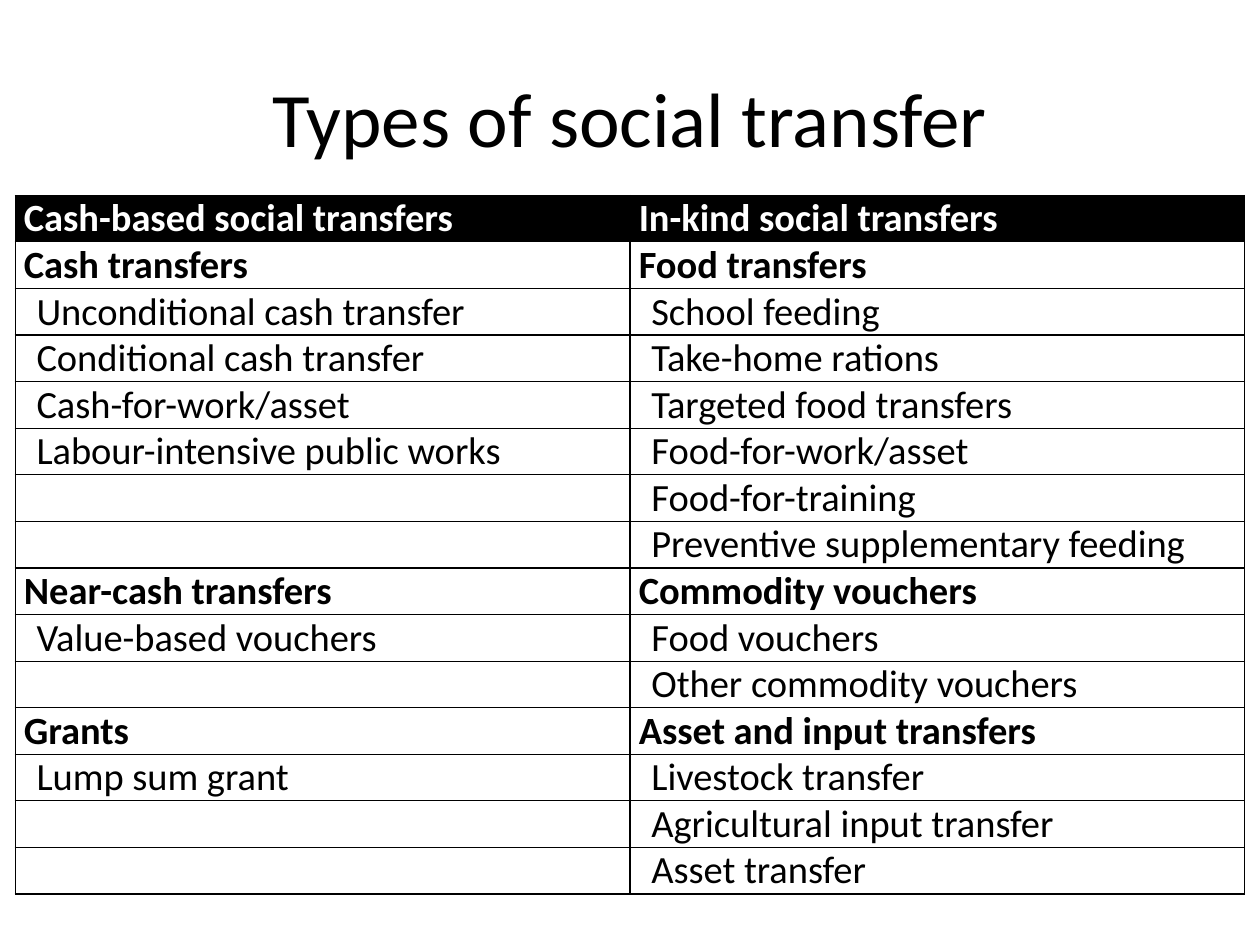
from dataclasses import dataclass

from lxml import etree
from pptx import Presentation
from pptx import util as u
from pptx.dml.color import RGBColor
from pptx.enum import text
from pptx.oxml.ns import qn

COLOURS = {"ink": "000000", "paper": "FFFFFF"}
FONT = "Calibri"
SLIDE_W, SLIDE_H = u.Inches(10), u.Inches(7.5)
ROW_H = u.Inches(0.37)
BORDER_W = u.Pt(0.75)
ITEM_INDENT = u.Inches(0.1)


@dataclass
class Level:
    """Look of one level of table entry."""
    ink: str
    fill: str
    bold: bool
    indent: int = 0


@dataclass
class Group:
    """A pair of headings with the transfers listed under each."""
    headings: tuple
    cash_items: list
    in_kind_items: list


HEADER = Level("paper", "ink", True)
HEADING = Level("ink", "paper", True)
ITEM = Level("ink", "paper", False, ITEM_INDENT)

COLUMN_TITLES = ("Cash-based social transfers", "In-kind social transfers")
GROUPS = [
    Group(("Cash transfers", "Food transfers"),
          ["Unconditional cash transfer", "Conditional cash transfer",
           "Cash-for-work/asset", "Labour-intensive public works"],
          ["School feeding", "Take-home rations", "Targeted food transfers",
           "Food-for-work/asset", "Food-for-training",
           "Preventive supplementary feeding"]),
    Group(("Near-cash transfers", "Commodity vouchers"),
          ["Value-based vouchers"],
          ["Food vouchers", "Other commodity vouchers"]),
    Group(("Grants", "Asset and input transfers"),
          ["Lump sum grant"],
          ["Livestock transfer", "Agricultural input transfer", "Asset transfer"]),
]


def colour(name: str) -> RGBColor:
    return RGBColor.from_string(COLOURS[name])


def apply(target, values: dict) -> None:
    for name, value in values.items():
        setattr(target, name, value)


def write(paragraph, wording: str, size: int, ink: str, bold: bool = False) -> None:
    run = paragraph.add_run()
    run.text = wording
    apply(run.font, {"name": FONT, "size": u.Pt(size), "bold": bold})
    run.font.color.rgb = colour(ink)


def add_borders(cell) -> None:
    properties = cell._tc.get_or_add_tcPr()
    for place, side in enumerate(("lnL", "lnR", "lnT", "lnB")):
        line = etree.Element(qn(f"a:{side}"), w=str(BORDER_W))
        fill = etree.SubElement(line, qn("a:solidFill"))
        etree.SubElement(fill, qn("a:srgbClr"), val=COLOURS["ink"])
        properties.insert(place, line)


def fill_cell(cell, wording: str, level: Level) -> None:
    apply(cell, {"margin_left": u.Inches(0.07), "margin_right": u.Inches(0.07),
                 "margin_top": 0, "margin_bottom": 0})
    cell.fill.solid()
    cell.fill.fore_color.rgb = colour(level.fill)
    add_borders(cell)
    if wording:
        paragraph = cell.text_frame.paragraphs[0]
        write(paragraph, wording, 22, level.ink, level.bold)
        if level.indent:
            paragraph._p.get_or_add_pPr().set("marL", str(level.indent))


def table_rows() -> list:
    rows = [(COLUMN_TITLES, HEADER)]
    for group in GROUPS:
        rows.append((group.headings, HEADING))
        blanks = len(group.in_kind_items) - len(group.cash_items)
        cash_items = group.cash_items + [""] * blanks
        rows += [(pair, ITEM) for pair in zip(cash_items, group.in_kind_items)]
    return rows


def add_title(slide) -> None:
    box = slide.shapes.add_textbox(
        int(SLIDE_W * 0.05), int(SLIDE_H * 0.04), int(SLIDE_W * 0.9), u.Inches(1.25))
    frame = box.text_frame
    apply(frame, {"word_wrap": True, "vertical_anchor": text.MSO_ANCHOR.MIDDLE})
    title = frame.paragraphs[0]
    title.alignment = text.PP_ALIGN.CENTER
    write(title, "Types of social transfer", 44, "ink")


def add_transfer_table(slide) -> None:
    rows = table_rows()
    margin = u.Inches(0.12)
    table = slide.shapes.add_table(
        len(rows), len(COLUMN_TITLES), margin, u.Inches(1.55),
        SLIDE_W - 2 * margin, ROW_H * len(rows)).table
    for row, (wordings, level) in enumerate(rows):
        for column, wording in enumerate(wordings):
            fill_cell(table.cell(row, column), wording, level)


def main() -> None:
    deck = Presentation()
    apply(deck, {"slide_width": SLIDE_W, "slide_height": SLIDE_H})
    slide = deck.slides.add_slide(deck.slide_layouts[6])
    add_title(slide)
    add_transfer_table(slide)
    deck.save("out.pptx")


if __name__ == "__main__":
    main()
